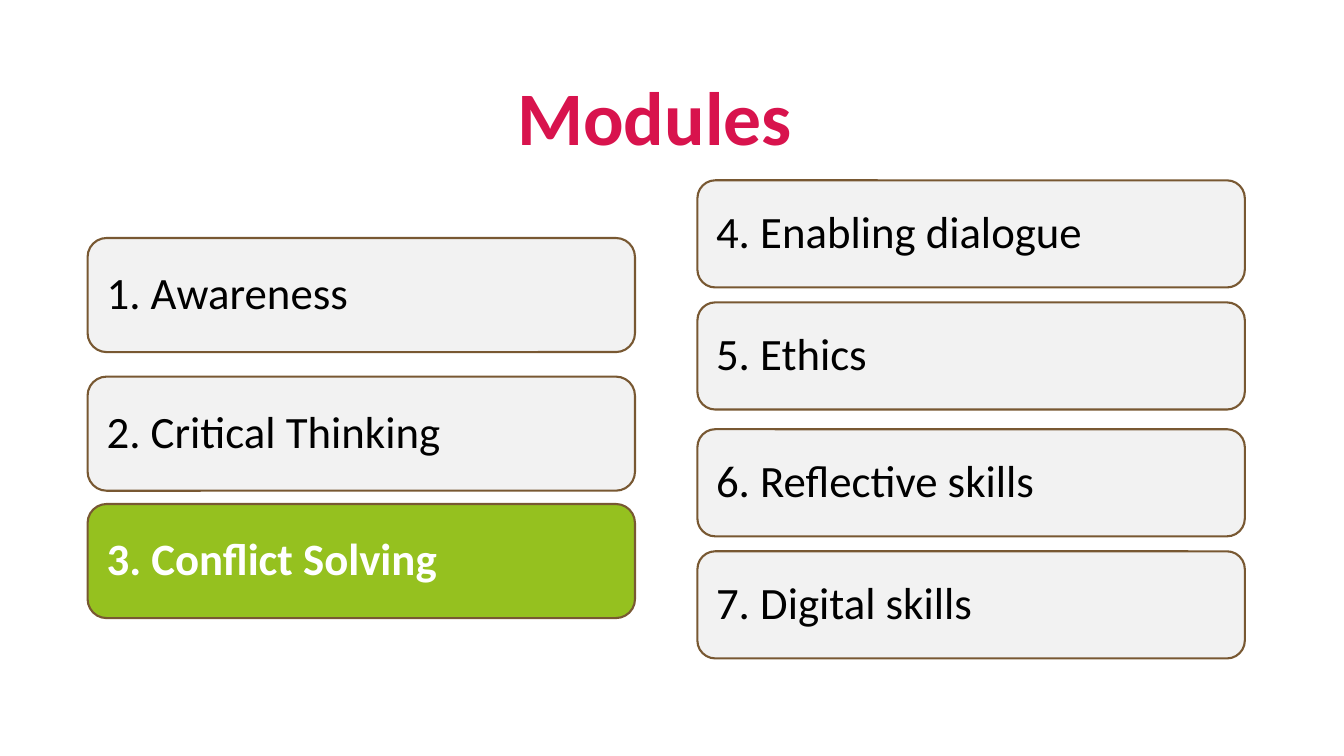
from pptx import Presentation
from pptx.dml.color import RGBColor
from pptx.enum import shapes, text
from pptx.util import Pt

CRIMSON = RGBColor(0xD8, 0x13, 0x4D)
GREEN = RGBColor(0x95, 0xC1, 0x1F)
GREY = RGBColor(0xF2, 0xF2, 0xF2)
BROWN = RGBColor(0x78, 0x58, 0x32)
BLACK = RGBColor(0, 0, 0)
WHITE = RGBColor(0xFF, 0xFF, 0xFF)

CARD_WIDTH = 391
CURRENT_MODULE = "3. Conflict Solving"
# Each column: left, card height, then the top and label of every card
COLUMNS = [
    (62.6, 81.5, [(170, "1. Awareness"),
                  (269, "2. Critical Thinking"),
                  (360, CURRENT_MODULE)]),
    (498.2, 76.5, [(128.8, "4. Enabling dialogue"),
                   (216, "5. Ethics"),
                   (306.6, "6. Reflective skills"),
                   (393.8, "7. Digital skills")]),
]


class ModuleSlide:
    font_name = "Calibri"
    card_inset = Pt(9.6)

    def __init__(self, deck):
        self.slide = deck.slides.add_slide(deck.slide_layouts[6])

    def add_label(self, frame, words, size, color, bold, align, anchor):
        frame.word_wrap = True
        frame.vertical_anchor = anchor
        para = frame.paragraphs[0]
        para.alignment = align
        para.line_spacing = 0.9
        span = para.add_run()
        span.text = words
        font = span.font
        font.name, font.size, font.bold = self.font_name, Pt(size), bold
        font.color.rgb = color

    def add_title(self, words, left, top, width, height):
        box = self.slide.shapes.add_textbox(Pt(left), Pt(top), Pt(width), Pt(height))
        self.add_label(box.text_frame, words, 54, CRIMSON, True,
                       text.PP_ALIGN.CENTER, text.MSO_ANCHOR.BOTTOM)

    def add_card(self, words, left, top, width, height, current=False):
        card = self.slide.shapes.add_shape(
            shapes.MSO_SHAPE.ROUNDED_RECTANGLE,
            Pt(left), Pt(top), Pt(width), Pt(height))
        card.shadow.inherit = False
        card.fill.solid()
        card.fill.fore_color.rgb = GREEN if current else GREY
        card.line.color.rgb = BROWN
        card.line.width = Pt(1.5)
        frame = card.text_frame
        frame.margin_left = frame.margin_right = self.card_inset
        frame.margin_top = frame.margin_bottom = self.card_inset
        self.add_label(frame, words, 32, WHITE if current else BLACK, current,
                       text.PP_ALIGN.LEFT, text.MSO_ANCHOR.MIDDLE)


def main():
    deck = Presentation()
    deck.slide_width, deck.slide_height = Pt(960), Pt(540)
    page = ModuleSlide(deck)
    page.add_title("Modules", 0.7, -21.6, 933.8, 140.4)
    for left, height, cards in COLUMNS:
        for top, label in cards:
            page.add_card(label, left, top, CARD_WIDTH, height,
                          current=label == CURRENT_MODULE)
    deck.save("out.pptx")


if __name__ == "__main__":
    main()
